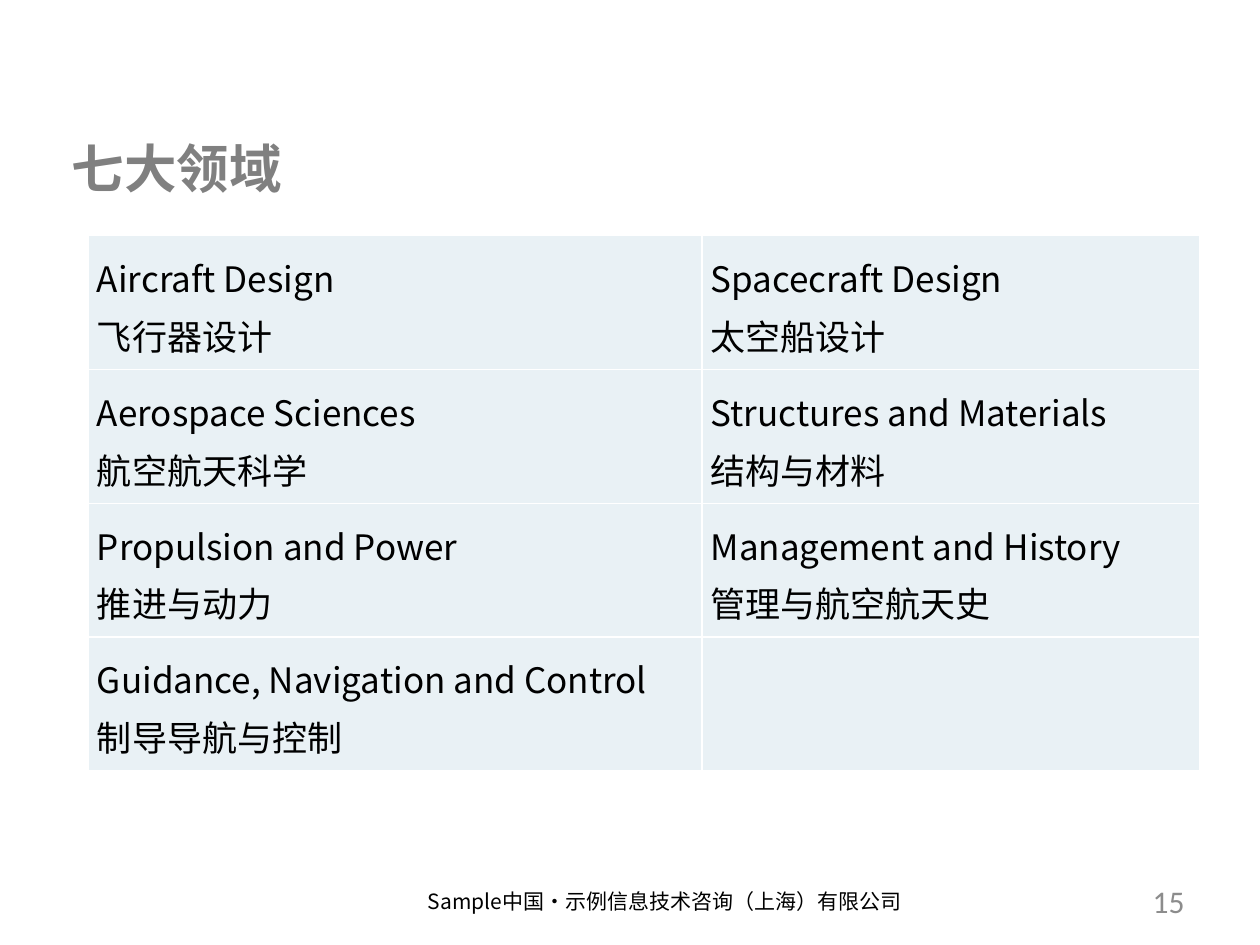
from lxml.etree import SubElement
from pptx import Presentation
from pptx.dml.color import RGBColor
from pptx.enum.text import MSO_ANCHOR, PP_ALIGN
from pptx.oxml.ns import qn
from pptx.util import Inches, Pt

SANS = "Noto Sans CJK SC"
HUES = {"title": "808080", "text": "000000", "page": "8C8C8C",
        "cell": "E9F1F5", "rule": "FFFFFF"}


def style(para, size, font, hue, align, bold=False):
    para.alignment = align
    for run in para.runs:
        run.font.size = Pt(size)
        run.font.name = font
        run.font.bold = bold
        run.font.color.rgb = RGBColor.from_string(HUES[hue])
        SubElement(run.font._element, qn("a:ea"), typeface=SANS)


deck = Presentation()
deck.slide_width, deck.slide_height = Inches(10), Inches(7.5)
slide = deck.slides.add_slide(deck.slide_layouts[6])

labels = [
    ("七大领域", (0.47, 0.86, 2.58, 0.94), 30, "Times New Roman", "title", PP_ALIGN.LEFT, True),
    ("Sample中国·示例信息技术咨询（上海）有限公司", (3.05, 6.95, 4.45, 0.4), 12, SANS,
     "text", PP_ALIGN.CENTER, False),
    ("15", (8.44, 6.95, 1.06, 0.4), 18, "Calibri", "page", PP_ALIGN.RIGHT, False),
]
for text, place, *look in labels:
    frame = slide.shapes.add_textbox(*map(Inches, place)).text_frame
    frame.word_wrap = True
    frame.vertical_anchor = MSO_ANCHOR.MIDDLE
    frame.text = text
    style(frame.paragraphs[0], *look)

fields = [
    ("Aircraft Design", "飞行器设计"),
    ("Spacecraft Design", "太空船设计"),
    ("Aerospace Sciences", "航空航天科学"),
    ("Structures and Materials", "结构与材料"),
    ("Propulsion and Power", "推进与动力"),
    ("Management and History", "管理与航空航天史"),
    ("Guidance, Navigation and Control", "制导导航与控制"),
]
table = slide.shapes.add_table(4, 2, Inches(0.7), Inches(1.87),
                               Inches(8.82), Inches(4.25)).table
table.first_row = table.horz_banding = False
for col, width in zip(table.columns, (4.87, 3.95)):
    col.width = Inches(width)

for cell in table.iter_cells():
    props = cell._tc.get_or_add_tcPr()
    for side in ("lnL", "lnR", "lnT", "lnB"):
        line = SubElement(props, qn(f"a:{side}"), w=str(Pt(1)))
        fill = SubElement(line, qn("a:solidFill"))
        SubElement(fill, qn("a:srgbClr"), val=HUES["rule"])
    cell.fill.solid()
    cell.fill.fore_color.rgb = RGBColor.from_string(HUES["cell"])
    cell.vertical_anchor = MSO_ANCHOR.MIDDLE
    cell.margin_left = cell.margin_right = Inches(0.07)
    cell.margin_top = cell.margin_bottom = 0

for cell, names in zip(table.iter_cells(), fields):
    cell.text_frame.text = "\n".join(names)
    for para in cell.text_frame.paragraphs:
        para.line_spacing = Pt(33)
        style(para, 20, SANS, "text", PP_ALIGN.JUSTIFY)

deck.save("out.pptx")
